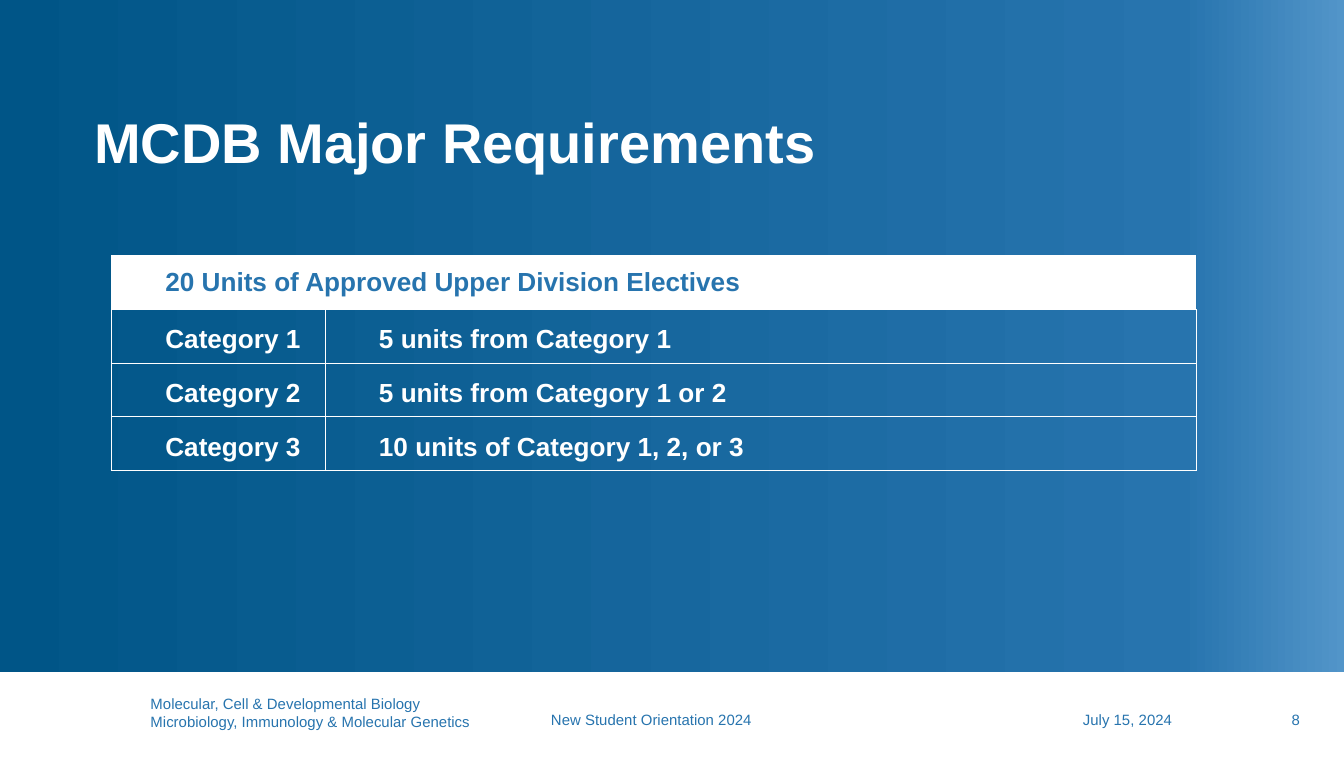
from copy import deepcopy
from dataclasses import dataclass

from lxml.etree import SubElement
from pptx import Presentation
from pptx.dml.color import RGBColor
from pptx.enum.shapes import MSO_SHAPE
from pptx.enum.text import MSO_ANCHOR, PP_ALIGN
from pptx.oxml.ns import qn
from pptx.util import Emu, Pt

WIDTH, HEIGHT = 1000, 563
EMU_PER_PX = 9144


@dataclass(frozen=True)
class Theme:
    font: str = "Arial"
    white: str = "FFFFFF"
    blue: str = "2774AE"
    gradient: tuple = ((0, "005587"), (0.88, "2774AE"), (1, "5295C9"))
    title_size: int = 30
    table_size: int = 14
    footer_size: int = 8
    border: float = 0.5


THEME = Theme()


def px(length):
    return Emu(length * EMU_PER_PX)


def place(shape, box):
    shape.left, shape.top, shape.width, shape.height = map(px, box)


def set_margins(target, left, top, right, bottom):
    target.margin_left, target.margin_top = px(left), px(top)
    target.margin_right, target.margin_bottom = px(right), px(bottom)


def style_text(frame, size, color, bold=False, align=PP_ALIGN.LEFT):
    for paragraph in frame.paragraphs:
        paragraph.alignment = align
        for span in paragraph.runs:
            span.font.name = THEME.font
            span.font.size = Pt(size)
            span.font.bold = bold
            span.font.color.rgb = RGBColor.from_string(color)


def paint_background(page):
    fill = page.background.fill
    fill.gradient()
    fill.gradient_angle = 0
    last_stop = list(page.element.iter(qn("a:gs")))[-1]
    last_stop.addnext(deepcopy(last_stop))
    for stop, (position, color) in zip(fill.gradient_stops, THEME.gradient):
        stop.position = position
        stop.color.rgb = RGBColor.from_string(color)


def add_title(page, box, text):
    title = page.shapes.title
    place(title, box)
    frame = title.text_frame
    frame.text = text
    frame.vertical_anchor = MSO_ANCHOR.MIDDLE
    frame.paragraphs[0].line_spacing = 0.9
    style_text(frame, THEME.title_size, THEME.white, bold=True)


def add_footer_text(page, box, text, align=PP_ALIGN.LEFT):
    label = page.shapes.add_textbox(*map(px, box))
    frame = label.text_frame
    frame.word_wrap = True
    frame.vertical_anchor = MSO_ANCHOR.BOTTOM
    set_margins(frame, 0, 1, 10, 1)
    frame.text = text
    style_text(frame, THEME.footer_size, THEME.blue, align=align)


def add_footer(page, box):
    left, top, width, height = box
    band = page.shapes.add_shape(MSO_SHAPE.RECTANGLE, *map(px, box))
    band.shadow.inherit = False
    band.fill.solid()
    band.fill.fore_color.rgb = RGBColor.from_string(THEME.white)
    band.line.fill.background()
    departments = "Molecular, Cell & Developmental Biology\nMicrobiology, Immunology & Molecular Genetics"
    add_footer_text(page, (left + 112, top + 16, 290, 28), departments)
    add_footer_text(page, (left + 410, top + 28, 320, 15), "New Student Orientation 2024")
    add_footer_text(page, (left + 732, top + 28, 150, 15), "July 15, 2024", PP_ALIGN.RIGHT)
    add_footer_text(page, (left + 890, top + 28, 87, 15), "8", PP_ALIGN.RIGHT)


def set_borders(cell, right_color):
    """Draw all four cell edges; the line elements must come before the fill."""
    properties = cell._tc.get_or_add_tcPr()
    colors = {"lnL": THEME.white, "lnR": right_color, "lnT": THEME.white, "lnB": THEME.white}
    for index, (edge, color) in enumerate(colors.items()):
        line = SubElement(properties, qn(f"a:{edge}"), w=str(Pt(THEME.border)))
        fill = SubElement(line, qn("a:solidFill"))
        SubElement(fill, qn("a:srgbClr"), val=color)
        properties.insert(index, line)


def add_requirements_table(page, box, column_widths, header, rows):
    table = page.shapes.add_table(len(rows) + 1, len(column_widths), *map(px, box)).table
    table.first_row = table.horz_banding = False
    for column, width in zip(table.columns, column_widths):
        column.width = px(width)
    table.cell(0, 0).merge(table.cell(0, len(column_widths) - 1))

    for row_index, texts in enumerate([(header, ""), *rows]):
        is_header = row_index == 0
        for column_index, text in enumerate(texts):
            cell = table.cell(row_index, column_index)
            cell.vertical_anchor = MSO_ANCHOR.MIDDLE
            set_margins(cell, 40, 0 if is_header else 5, 0, 0)
            if is_header:
                cell.fill.solid()
                cell.fill.fore_color.rgb = RGBColor.from_string(THEME.white)
            else:
                cell.fill.background()
            set_borders(cell, THEME.blue if is_header else THEME.white)
            if text:
                cell.text_frame.text = text
                color = THEME.blue if is_header else THEME.white
                style_text(cell.text_frame, THEME.table_size, color, bold=True)


def main():
    deck = Presentation()
    deck.slide_width, deck.slide_height = px(WIDTH), px(HEIGHT)
    page = deck.slides.add_slide(deck.slide_layouts.get_by_name("Title Only"))
    paint_background(page)
    add_footer(page, (0, 500, WIDTH, HEIGHT - 500))
    add_title(page, (60, 80, 800, 56), "MCDB Major Requirements")
    add_requirements_table(
        page,
        (83, 190, 807, 160),
        (159, 648),
        "20 Units of Approved Upper Division Electives",
        [
            ("Category 1", "5 units from Category 1"),
            ("Category 2", "5 units from Category 1 or 2"),
            ("Category 3", "10 units of Category 1, 2, or 3"),
        ],
    )
    deck.save("out.pptx")


if __name__ == "__main__":
    main()
